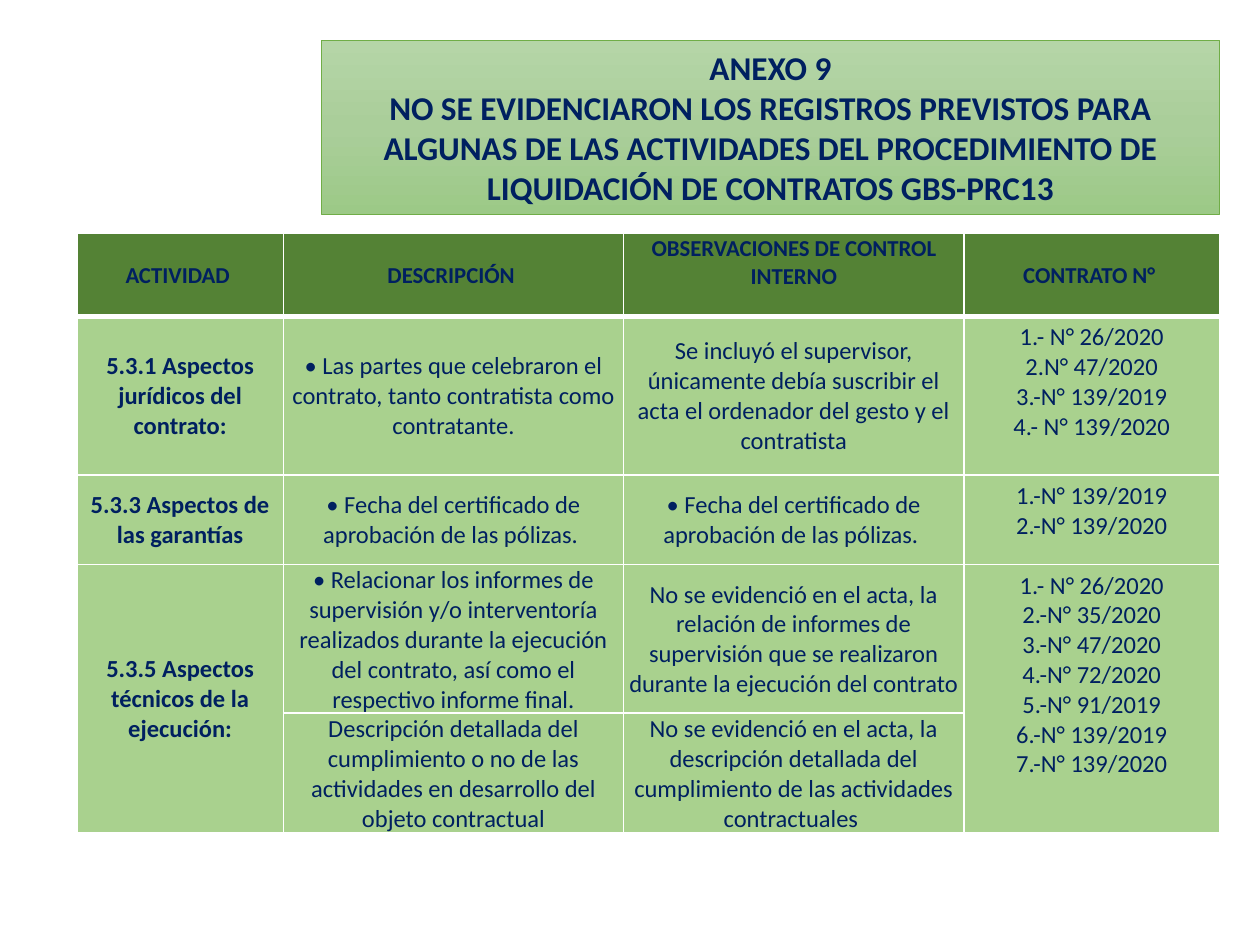
import copy

import pptx
import pptx.dml.color
import pptx.enum.text
import pptx.oxml
import pptx.oxml.ns
import pptx.util

RGBColor = pptx.dml.color.RGBColor
Inches = pptx.util.Inches
Pt = pptx.util.Pt
MIDDLE = pptx.enum.text.MSO_ANCHOR.MIDDLE

NAVY = RGBColor(0x00, 0x20, 0x60)
WHITE = RGBColor(0xFF, 0xFF, 0xFF)
HEADER_GREEN = RGBColor(0x54, 0x82, 0x35)
BODY_GREEN = RGBColor(0xA9, 0xD1, 0x8E)
OUTLINE_GREEN = RGBColor(0x70, 0xAD, 0x47)
BANNER_GREENS = [RGBColor(0xB5, 0xD5, 0xA7), RGBColor(0xAA, 0xCE, 0x9A),
                 RGBColor(0x9C, 0xC9, 0x87)]

COLUMN_WIDTHS = [1.64, 2.7, 2.7, 2.03]
ROW_HEIGHTS = [0.66, 1.26, 0.71, 1.18, 0.95]
ACTIVITY, CONTRACTS = 0, 3
MERGED_ROWS = (3, 4)

TITLE = [
    "ANEXO 9",
    "NO SE EVIDENCIARON LOS REGISTROS PREVISTOS PARA ALGUNAS DE LAS ACTIVIDADES "
    "DEL PROCEDIMIENTO DE LIQUIDACIÓN DE CONTRATOS GBS-PRC13",
]
POLICY_DATE = "• Fecha del certificado de aprobación de las pólizas. "
ROWS = [
    [["ACTIVIDAD "], ["DESCRIPCIÓN "], ["OBSERVACIONES DE CONTROL INTERNO"],
     ["CONTRATO N° "]],
    [["5.3.1 Aspectos jurídicos del contrato:"],
     ["• Las partes que celebraron el contrato, tanto contratista como contratante."],
     ["Se incluyó el supervisor, únicamente debía suscribir el acta el ordenador "
      "del gesto y el contratista"],
     ["1.- N° 26/2020", "2.N° 47/2020", "3.-N° 139/2019", "4.- N° 139/2020"]],
    [["5.3.3 Aspectos de las garantías"], [POLICY_DATE], [POLICY_DATE],
     ["1.-N° 139/2019", "2.-N° 139/2020"]],
    [["5.3.5 Aspectos técnicos de la ejecución:"],
     ["• Relacionar los informes de supervisión y/o interventoría realizados durante "
      "la ejecución del contrato, así como el respectivo informe final."],
     ["No se evidenció en el acta, la relación de informes de supervisión que se "
      "realizaron durante la ejecución del contrato"],
     ["1.- N° 26/2020", "2.-N° 35/2020", "3.-N° 47/2020", "4.-N° 72/2020",
      "5.-N° 91/2019", "6.-N° 139/2019", "7.-N° 139/2020"]],
    [None,
     ["Descripción detallada del cumplimiento o no de las actividades en desarrollo "
      "del objeto contractual"],
     ["No se evidenció en el acta, la descripción detallada del cumplimiento de las "
      "actividades contractuales "],
     None],
]


def write_paragraphs(frame, lines, size, bold):
    for index, line in enumerate(lines):
        paragraph = frame.add_paragraph() if index else frame.paragraphs[0]
        paragraph.alignment = pptx.enum.text.PP_ALIGN.CENTER
        paragraph.line_spacing = 1.0
        run = paragraph.add_run()
        run.text = line
        run.font.name = "Calibri"
        run.font.size = Pt(size)
        run.font.bold = bold
        run.font.color.rgb = NAVY


def apply_gradient(fill, colours):
    fill.gradient()
    fill.gradient_angle = 270
    stop_list = fill._xPr.find(".//" + pptx.oxml.ns.qn("a:gsLst"))
    stop_list.insert(1, copy.deepcopy(stop_list[0]))
    for index, (stop, colour) in enumerate(zip(fill.gradient_stops, colours)):
        stop.color.rgb = colour
        stop.position = index / (len(colours) - 1)


def format_title(banner):
    banner.left, banner.top = Inches(2.55), Inches(0.32)
    banner.width, banner.height = Inches(7.13), Inches(1.38)
    apply_gradient(banner.fill, BANNER_GREENS)
    banner.line.color.rgb = OUTLINE_GREEN
    banner.line.width = Pt(0.5)
    frame = banner.text_frame
    frame.word_wrap = True
    frame.auto_size = pptx.enum.text.MSO_AUTO_SIZE.SHAPE_TO_FIT_TEXT
    frame.vertical_anchor = MIDDLE
    write_paragraphs(frame, TITLE, 19, True)


def draw_borders(cell, top=1, bottom=1):
    widths = {"lnL": 1, "lnR": 1, "lnT": top, "lnB": bottom}
    properties = cell._tc.get_or_add_tcPr()
    for position, (side, width) in enumerate(widths.items()):
        properties.insert(position, pptx.oxml.parse_xml(
            f'<a:{side} {pptx.oxml.ns.nsdecls("a")} w="{Pt(width)}">'
            f'<a:solidFill><a:srgbClr val="{WHITE}"/></a:solidFill></a:{side}>'))


def format_cell(cell, row, column):
    header = row == 0
    cell.fill.solid()
    cell.fill.fore_color.rgb = HEADER_GREEN if header else BODY_GREEN
    draw_borders(cell, top=3 if row == 1 else 1, bottom=3 if header else 1)
    if header or column != CONTRACTS:
        cell.vertical_anchor = MIDDLE
        cell.margin_left = cell.margin_right = cell.margin_top = Inches(0.01)
        cell.margin_bottom = Inches(0.2 if header and column == 2 else 0)
    lines = ROWS[row][column]
    if lines:
        write_paragraphs(cell.text_frame, lines, 13 if header else 14,
                         header or column == ACTIVITY)


def add_findings_table(slide):
    frame = slide.shapes.add_table(
        len(ROW_HEIGHTS), len(COLUMN_WIDTHS), Inches(0.61), Inches(1.85),
        Inches(sum(COLUMN_WIDTHS)), Inches(sum(ROW_HEIGHTS)))
    table = frame.table
    for column, width in zip(table.columns, COLUMN_WIDTHS):
        column.width = Inches(width)
    for row, height in zip(table.rows, ROW_HEIGHTS):
        row.height = Inches(height)
    first, last = MERGED_ROWS
    for column in (ACTIVITY, CONTRACTS):
        table.cell(first, column).merge(table.cell(last, column))
    for row in range(len(ROW_HEIGHTS)):
        for column in range(len(COLUMN_WIDTHS)):
            format_cell(table.cell(row, column), row, column)


def main():
    deck = pptx.Presentation()
    deck.slide_width, deck.slide_height = Inches(10), Inches(7.5)
    slide = deck.slides.add_slide(deck.slide_layouts[5])
    format_title(slide.shapes.title)
    add_findings_table(slide)
    deck.save("out.pptx")


if __name__ == "__main__":
    main()
